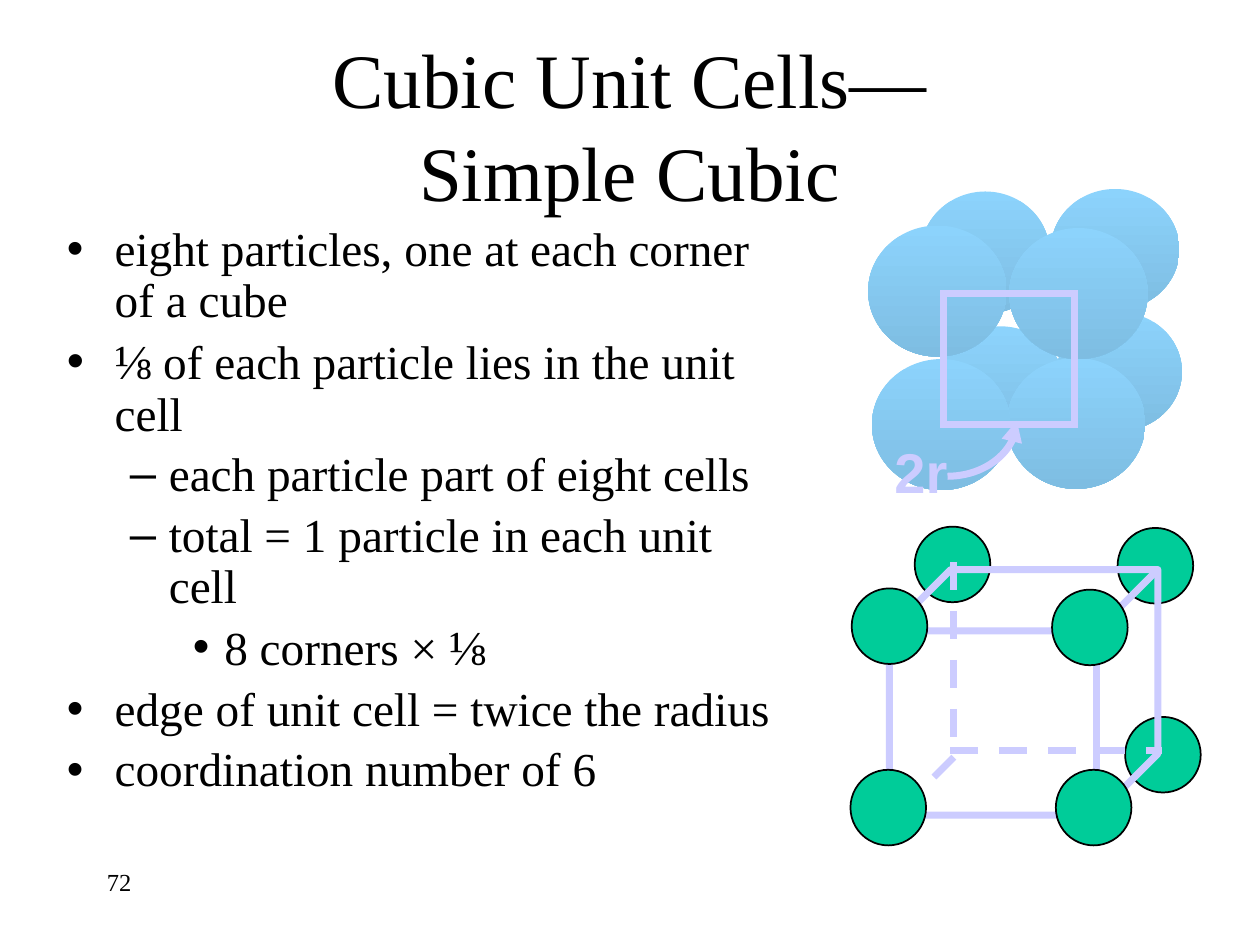
from lxml import etree
from pptx import Presentation
from pptx.dml.color import RGBColor
from pptx.enum.dml import MSO_LINE
from pptx.enum.shapes import MSO_CONNECTOR, MSO_SHAPE
from pptx.enum.text import MSO_ANCHOR, MSO_AUTO_SIZE, PP_ALIGN
from pptx.oxml.ns import qn
from pptx.util import Inches, Pt

COLORS = {"text": "000000", "edge": "CCCCFF", "corner": "00CC99",
          "sphere top": "8CD3FC", "sphere bottom": "7EBDE2"}
SERIF = "Times New Roman"

TITLE = "Cubic Unit Cells—\vSimple Cubic"
# (level, runs)
POINTS = [
    (0, ["eight particles, one at each corner of a cube"]),
    (0, ["⅛", " of each particle lies in the unit cell"]),
    (1, ["each particle part of eight cells"]),
    (1, ["total = 1 particle in each unit cell"]),
    (2, ["8 corners × ", "⅛"]),
    (0, ["edge of unit cell = twice the radius"]),
    (0, ["coordination number of 6"]),
]
# per level: left margin, hanging indent, bullet
LEVELS = [(0.38, -0.38, "•"), (0.81, -0.31, "–"), (1.25, -0.25, "•")]
EDGE_LABEL = "2r"
PAGE_NUMBER = "72"

# left, top, width, height, from back to front
SPHERES = [
    (7.43, 2.59, 1.02, 0.96), (7.31, 1.52, 1.02, 0.97),
    (8.34, 1.5, 1.02, 0.96), (8.39, 2.48, 0.99, 0.94),
    (7.99, 2.84, 1.1, 1.04), (6.92, 2.85, 1.1, 1.04),
    (6.89, 1.79, 1.1, 1.04), (8.01, 1.81, 1.1, 1.04),
]
CORNER_SIZE = 0.6
BACK_CORNERS = [(8.93, 5.69), (8.87, 4.19), (7.26, 4.18)]
FRONT_CORNERS = [(6.76, 4.67), (8.35, 4.68), (8.38, 6.11), (6.75, 6.11)]
HIDDEN_DEPTH = (7.57, 6.01, 7.06, 6.52)
HIDDEN_HEIGHT = (7.57, 4.46, 7.57, 6.01)
HIDDEN_WIDTH = (7.54, 5.96, 9.22, 5.96)
CUBE = (7.06, 4.52, 2.13, 1.95)
FRONT_FACE = (7.49, 2.33, 1.04, 1.04)
ARROW_CURVE = [(8.07, 3.34), (8.07, 3.58), (7.82, 3.78), (7.52, 3.78)]
ARROW_STEPS = 24


def rgb(name):
    return RGBColor.from_string(COLORS[name])


def inches(values):
    return [Inches(value) for value in values]


def style_runs(paragraph, size, font=SERIF, color="text", bold=False):
    for run in paragraph.runs:
        run.font.size = Pt(size)
        run.font.name = font
        run.font.bold = bold
        run.font.color.rgb = rgb(color)


def place(shape, box):
    shape.left, shape.top, shape.width, shape.height = inches(box)


def add_outline(shapes, kind, box, color, width):
    outline = shapes.add_shape(kind, *inches(box))
    outline.shadow.inherit = False
    outline.fill.background()
    outline.line.color.rgb = rgb(color)
    outline.line.width = Pt(width)
    return outline


def add_corners(shapes, positions):
    for left, top in positions:
        corner = add_outline(shapes, MSO_SHAPE.OVAL,
                             (left, top, CORNER_SIZE, CORNER_SIZE), "text", 1)
        corner.fill.solid()
        corner.fill.fore_color.rgb = rgb("corner")


def add_hidden_edge(shapes, ends):
    edge = shapes.add_connector(MSO_CONNECTOR.STRAIGHT, *inches(ends))
    edge.line.color.rgb = rgb("edge")
    edge.line.width = Pt(4)
    edge.line.dash_style = MSO_LINE.DASH
    etree.SubElement(edge._element.spPr, qn("a:effectLst"))


def add_spheres(shapes):
    cluster = shapes.add_group_shape()
    for box in SPHERES:
        sphere = cluster.shapes.add_shape(MSO_SHAPE.OVAL, *inches(box))
        sphere.shadow.inherit = False
        sphere.line.fill.background()
        sphere.fill.gradient()
        sphere.fill.gradient_angle = 270
        stops = sphere.fill.gradient_stops
        for stop, position, color in zip(stops, (0, 1), ("sphere top", "sphere bottom")):
            stop.position = position
            stop.color.rgb = rgb(color)


def bezier(points, t):
    """Return the point at t on a cubic Bezier curve."""
    weights = ((1 - t) ** 3, 3 * t * (1 - t) ** 2, 3 * t ** 2 * (1 - t), t ** 3)
    return tuple(sum(w * p[axis] for w, p in zip(weights, points)) for axis in (0, 1))


def add_curved_arrow(shapes):
    start, *others = [inches(bezier(ARROW_CURVE, step / ARROW_STEPS))
                      for step in range(ARROW_STEPS + 1)]
    builder = shapes.build_freeform(*start)
    builder.add_line_segments(others, close=False)
    arrow = builder.convert_to_shape()
    arrow.shadow.inherit = False
    arrow.fill.background()
    arrow.line.color.rgb = rgb("edge")
    arrow.line.width = Pt(4)
    etree.SubElement(arrow.line._get_or_add_ln(), qn("a:headEnd"), type="triangle")


def add_label(shapes, text, box, wrap, **style):
    label = shapes.add_textbox(*inches(box))
    label.text_frame.word_wrap = wrap
    label.text_frame.text = text
    style_runs(label.text_frame.paragraphs[0], **style)


def fill_title(title):
    place(title, (0.75, 0.36, 8.5, 1.25))
    frame = title.text_frame
    frame.text = TITLE
    frame.auto_size = MSO_AUTO_SIZE.NONE
    frame.vertical_anchor = MSO_ANCHOR.MIDDLE
    frame.paragraphs[0].alignment = PP_ALIGN.CENTER
    style_runs(frame.paragraphs[0], 44)


def fill_points(body):
    place(body, (0.43, 1.74, 5.82, 4.92))
    frame = body.text_frame
    frame.auto_size = MSO_AUTO_SIZE.NONE
    for number, (level, texts) in enumerate(POINTS):
        point = frame.add_paragraph() if number else frame.paragraphs[0]
        point.level = level
        point.line_spacing = 0.9
        point.space_before = Pt(5.4)
        for text in texts:
            point.add_run().text = text
        style_runs(point, 27)
        for run in point.runs:
            if run.text == "⅛":
                run.font.size = Pt(28)
        margin, indent, bullet = LEVELS[level]
        properties = point._p.get_or_add_pPr()
        properties.set("marL", str(Inches(margin)))
        properties.set("indent", str(Inches(indent)))
        etree.SubElement(properties, qn("a:buChar"), char=bullet)


def main():
    deck = Presentation()
    deck.slide_width, deck.slide_height = Inches(10), Inches(7.5)
    slide = deck.slides.add_slide(deck.slide_layouts[1])
    shapes = slide.shapes
    fill_title(shapes.title)
    fill_points(slide.placeholders[1])
    add_label(shapes, PAGE_NUMBER, (0.75, 6.83, 2.08, 0.5), True, size=14)

    add_hidden_edge(shapes, HIDDEN_DEPTH)
    add_corners(shapes, BACK_CORNERS)
    add_spheres(shapes)
    add_hidden_edge(shapes, HIDDEN_HEIGHT)
    add_outline(shapes, MSO_SHAPE.CUBE, CUBE, "edge", 4)
    add_corners(shapes, FRONT_CORNERS)
    add_hidden_edge(shapes, HIDDEN_WIDTH)

    face = add_outline(shapes, MSO_SHAPE.RECTANGLE, FRONT_FACE, "edge", 4)
    etree.SubElement(face.line._get_or_add_ln(), qn("a:miter"), lim="800000")
    add_label(shapes, EDGE_LABEL, (7, 3.42, 0.62, 0.63), False,
              size=32, font="Arial", color="edge", bold=True)
    add_curved_arrow(shapes)
    deck.save("out.pptx")


if __name__ == "__main__":
    main()
